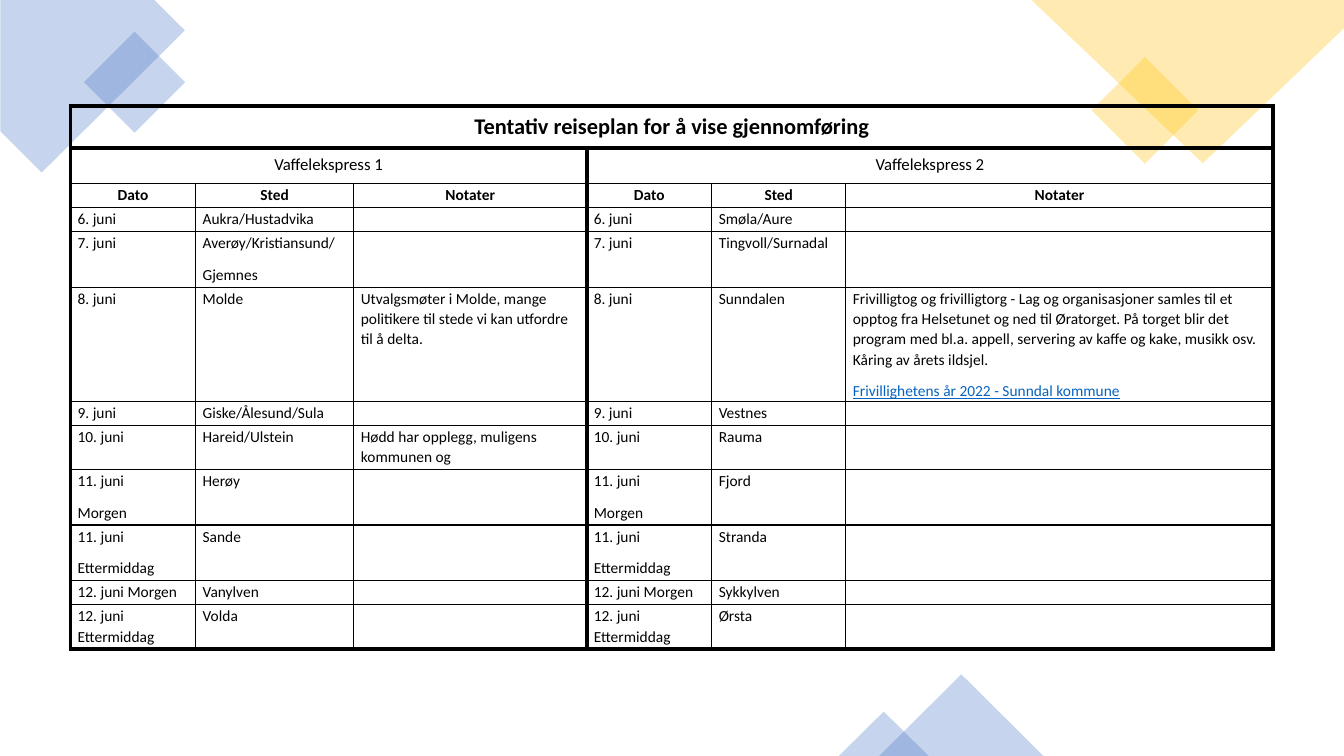
import math
from dataclasses import dataclass
from typing import Any

from lxml import etree
from pptx import Presentation
from pptx import util as u
from pptx.dml import color
from pptx.enum import shapes, text
from pptx.oxml import ns

COLORS = {"blue": "4472C4", "gold": "FFC000", "ink": "000000", "link": "0563C1"}
OPACITY = 30
THIN, THICK = 1, 3

# Format values for each kind of row
TITLE = {"size": u.Pt(16), "bold": True}
BLOCK = {"size": u.Pt(12), "bold": False}
HEADING = {"size": u.Pt(11), "bold": True}
BODY = {"size": u.Pt(11), "bold": False}
LINK = {"underline": True}
WIDE_MARGINS = {"margin_left": 0.1, "margin_right": 0.1, "margin_top": 0.05, "margin_bottom": 0.05}
TIGHT_MARGINS = {"margin_left": 0.07, "margin_right": 0.07, "margin_top": 0.01, "margin_bottom": 0}


@dataclass(frozen=True)
class Tile:
    preset: Any
    left: float
    top: float
    width: float
    height: float
    rotation: float
    fill: str


@dataclass(frozen=True)
class Corner:
    points: list[tuple[float, float]]
    centre: tuple[float, float]
    rotation: float
    fill: str


@dataclass(frozen=True)
class Day:
    date: str
    height: float
    place_1: str
    place_2: str
    note_1: str = ""
    note_2: str = ""


DIAMOND, TRIANGLE = shapes.MSO_SHAPE.RECTANGLE, shapes.MSO_SHAPE.ISOSCELES_TRIANGLE
DECOR = [
    Corner([(1.53, 0), (0, 0), (0, 1.3), (0.41, 1.71), (1.83, 0.3)], (0.59, 0.48), 315, "blue"),
    Tile(DIAMOND, 0.98, 0.46, 0.71, 0.71, 315, "blue"),
    Tile(DIAMOND, 10.98, 0.72, 0.75, 0.75, 315, "gold"),
    Corner([(13.33, 0), (10.23, 0), (11.93, 1.62), (13.33, 0.28)], (11.78, 0.81), 180, "gold"),
    Tile(TRIANGLE, 8.72, 6.69, 1.63, 0.81, 0, "blue"),
    Tile(TRIANGLE, 8.32, 7.06, 0.89, 0.44, 0, "blue"),
]

LINK_TEXT = "Frivillighetens år 2022 - Sunndal kommune"
COLUMN_WIDTHS = [1.24, 1.57, 2.31, 1.24, 1.33, 4.24]
HEADER_HEIGHTS = [0.42, 0.35, 0.24]
DAYS = [
    Day("6. juni", 0.24, "Aukra/Hustadvika", "Smøla/Aure"),
    Day("7. juni", 0.55, "Averøy/Kristiansund/\nGjemnes", "Tingvoll/Surnadal"),
    Day("8. juni", 1.13, "Molde", "Sunndalen",
        "Utvalgsmøter i Molde, mange politikere til stede vi kan utfordre til å delta.",
        "Frivilligtog og frivilligtorg - Lag og organisasjoner samles til et opptog fra "
        "Helsetunet og ned til Øratorget. På torget blir det program med bl.a. appell, "
        f"servering av kaffe og kake, musikk osv. Kåring av årets ildsjel.\n{LINK_TEXT}"),
    Day("9. juni", 0.24, "Giske/Ålesund/Sula", "Vestnes"),
    Day("10. juni", 0.44, "Hareid/Ulstein", "Rauma", "Hødd har opplegg, muligens kommunen og"),
    Day("11. juni\nMorgen", 0.55, "Herøy", "Fjord"),
    Day("11. juni\nEttermiddag", 0.55, "Sande", "Stranda"),
    Day("12. juni Morgen", 0.24, "Vanylven", "Sykkylven"),
    Day("12. juni Ettermiddag", 0.44, "Volda", "Ørsta"),
]


def set_values(target: Any, values: dict[str, Any]) -> None:
    for name, value in values.items():
        setattr(target, name, value)


def paint(decoration: Any, rotation: float, fill: str) -> None:
    decoration.shadow.inherit = False
    decoration.rotation = rotation
    decoration.line.fill.background()
    decoration.fill.solid()
    decoration.fill.fore_color.rgb = color.RGBColor.from_string(COLORS[fill])
    tint = decoration.fill._xPr.find(".//" + ns.qn("a:srgbClr"))
    etree.SubElement(tint, ns.qn("a:alpha"), val=str(OPACITY * 1000))


def draw_tile(slide: Any, tile: Tile) -> None:
    box = (u.Inches(side) for side in (tile.left, tile.top, tile.width, tile.height))
    paint(slide.shapes.add_shape(tile.preset, *box), tile.rotation, tile.fill)


def draw_corner(slide: Any, corner: Corner) -> None:
    """Turn the outline back about its centre, so that the rotation puts it in place."""
    angle = math.radians(corner.rotation)
    cos, sin = math.cos(angle), math.sin(angle)
    cx, cy = corner.centre
    turned = [(u.Inches(cx + (x - cx) * cos + (y - cy) * sin),
               u.Inches(cy - (x - cx) * sin + (y - cy) * cos)) for x, y in corner.points]
    outline = slide.shapes.build_freeform(*turned[0])
    outline.add_line_segments(turned[1:], close=True)
    paint(outline.convert_to_shape(), corner.rotation, corner.fill)


def write(cell: Any, content: str, font: dict[str, Any], margins: dict[str, float],
          centred: bool) -> None:
    set_values(cell, {side: u.Inches(length) for side, length in margins.items()})
    for number, line in enumerate(content.split("\n")):
        frame = cell.text_frame
        paragraph = frame.add_paragraph() if number else frame.paragraphs[0]
        set_values(paragraph, {
            "alignment": text.PP_ALIGN.CENTER if centred else text.PP_ALIGN.LEFT,
            "line_spacing": 1.07, "space_after": u.Pt(8)})
        if not line:
            etree.SubElement(paragraph._p, ns.qn("a:endParaRPr"), sz=str(int(font["size"].pt * 100)))
            continue
        run = paragraph.add_run()
        run.text = line
        is_link = line == LINK_TEXT
        set_values(run.font, {"name": "Calibri", **font, **(LINK if is_link else {})})
        run.font.color.rgb = color.RGBColor.from_string(COLORS["link" if is_link else "ink"])


def add_borders(cell: Any, row: int, column: int, last_row: int) -> None:
    starts, ends = ({0}, {5}) if row == 0 else ({0, 3}, {2, 5})
    left = THICK if column in starts else THIN
    right = THICK if column in ends or cell.is_merge_origin else THIN
    if cell.is_spanned:
        left, right = 0, THICK if column in ends else 0
    widths = {"L": left, "R": right, "T": THICK if row <= 1 else THIN,
              "B": THICK if row in (0, last_row) else THIN}
    properties = cell._tc.get_or_add_tcPr()
    for side, width in widths.items():
        edge = etree.SubElement(properties, ns.qn(f"a:ln{side}"), w=str(u.Pt(width)))
        if width:
            ink = etree.SubElement(edge, ns.qn("a:solidFill"))
            etree.SubElement(ink, ns.qn("a:srgbClr"), val=COLORS["ink"])
        else:
            etree.SubElement(edge, ns.qn("a:noFill"))
    cell.fill.background()


def draw_plan(slide: Any) -> None:
    heights = HEADER_HEIGHTS + [day.height for day in DAYS]
    plan = slide.shapes.add_table(
        len(heights), len(COLUMN_WIDTHS), u.Inches(0.7), u.Inches(1.05),
        u.Inches(sum(COLUMN_WIDTHS)), u.Inches(sum(heights))).table
    set_values(plan, {"first_row": False, "horz_banding": False})
    for column, width in zip(plan.columns, COLUMN_WIDTHS):
        column.width = u.Inches(width)
    for row, height in zip(plan.rows, heights):
        row.height = u.Inches(height)

    # Title and block names
    for row, first, last, label, font in [
            (0, 0, 5, "Tentativ reiseplan for å vise gjennomføring", TITLE),
            (1, 0, 2, "Vaffelekspress 1", BLOCK), (1, 3, 5, "Vaffelekspress 2", BLOCK)]:
        plan.cell(row, first).merge(plan.cell(row, last))
        write(plan.cell(row, first), label, font, WIDE_MARGINS, True)

    # Column headings and days
    lines = [["Dato", "Sted", "Notater"] * 2]
    lines += [[d.date, d.place_1, d.note_1, d.date, d.place_2, d.note_2] for d in DAYS]
    for row, line in enumerate(lines, start=2):
        for column, content in enumerate(line):
            is_heading = row == 2
            write(plan.cell(row, column), content, HEADING if is_heading else BODY,
                  TIGHT_MARGINS, is_heading)

    for row in range(len(heights)):
        for column in range(len(COLUMN_WIDTHS)):
            add_borders(plan.cell(row, column), row, column, len(heights) - 1)


def main() -> None:
    deck = Presentation()
    set_values(deck, {"slide_width": u.Inches(13.33), "slide_height": u.Inches(7.5)})
    slide = deck.slides.add_slide(deck.slide_layouts[6])
    for part in DECOR:
        if isinstance(part, Tile):
            draw_tile(slide, part)
        else:
            draw_corner(slide, part)
    draw_plan(slide)
    deck.save("out.pptx")


if __name__ == "__main__":
    main()
